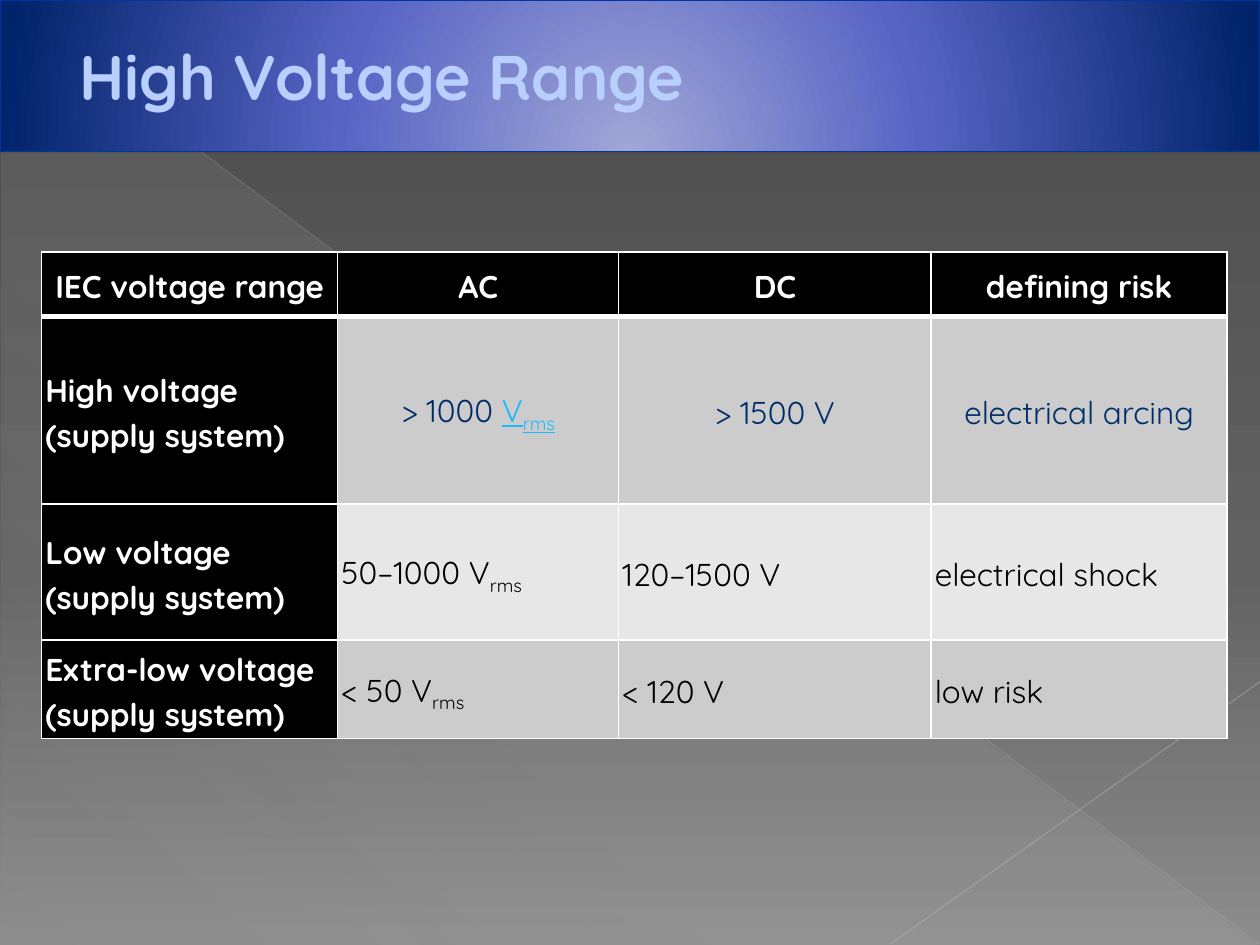
from dataclasses import dataclass

from lxml.etree import SubElement
from pptx import Presentation
from pptx.dml.color import RGBColor
from pptx.enum.shapes import MSO_CONNECTOR, MSO_SHAPE
from pptx.enum.text import MSO_ANCHOR, PP_ALIGN
from pptx.oxml.ns import qn
from pptx.util import Inches, Pt


@dataclass(frozen=True)
class Theme:
    font: str = "Quicksand"
    title_size: float = 36
    table_size: float = 18
    title: str = "B9D0FF"
    title_line: str = "00349E"
    white: str = "FFFFFF"
    black: str = "000000"
    accent: str = "002D6A"
    link: str = "17BBFD"
    bands: tuple = ("CCCCCC", "E7E7E7")
    backdrop: tuple = ((0, "4A4A4A"), (60, "626262"), (100, "8C8C8C"))
    banner: tuple = ((0, "A1A6D6"), (46, "5864C4"), (100, "00236A"))
    sheen: tuple = ((0, "D2D2D2", 10), (70, "D2D2D2", 8), (100, "D2D2D2", 1))


THEME = Theme()
COLUMNS = (2.35, 2.23, 2.48, 2.35)
ROWS = (0.51, 1.49, 1.08, 0.64)
# A "|" splits a value from its subscript.
CELLS = (
    ("IEC voltage range", "AC", "DC", "defining risk"),
    ("High voltage (supply system)", "> 1000 |V|rms", "> 1500 V", "electrical arcing"),
    ("Low voltage (supply system)", "50–1000 V|rms", "120–1500 V", "electrical shock"),
    ("Extra-low voltage (supply system)", "< 50 V|rms", "< 120 V", "low risk"),
)


def add_color(parent, color, alpha=100):
    node = SubElement(parent, qn("a:srgbClr"), val=color)
    if alpha < 100:
        SubElement(node, qn("a:alpha"), val=str(alpha * 1000))


def set_gradient(fill, holder, stops, angle=None, center=None):
    """Fill holder with stops, along an angle or around a center rectangle."""
    fill.solid()
    solid = holder.find(qn("a:solidFill"))
    gradient = holder.makeelement(qn("a:gradFill"), {"rotWithShape": "1"})
    stop_list = SubElement(gradient, qn("a:gsLst"))
    for position, *color in stops:
        add_color(SubElement(stop_list, qn("a:gs"), pos=str(position * 1000)), *color)
    if center:
        circle = SubElement(gradient, qn("a:path"), {"path": "circle"})
        sides = {side: str(value * 1000) for side, value in zip("ltrb", center)}
        SubElement(circle, qn("a:fillToRect"), sides)
    else:
        SubElement(gradient, qn("a:lin"), ang=str(angle * 60000), scaled="0")
    holder.replace(solid, gradient)


def style_span(span, size, color, bold=False):
    span.font.name = THEME.font
    span.font.size = Pt(size)
    span.font.bold = bold
    span.font.color.rgb = RGBColor.from_string(color)


def add_sheen(slide):
    triangle = slide.shapes.add_shape(
        MSO_SHAPE.RIGHT_TRIANGLE, Inches(0.01), Inches(0.02), Inches(9.98), Inches(7.48))
    triangle.shadow.inherit = False
    triangle.line.fill.background()
    set_gradient(triangle.fill, triangle.element.spPr, THEME.sheen, angle=133)


def add_hairline(slide, start, end, color, width, alpha):
    line = slide.shapes.add_connector(
        MSO_CONNECTOR.STRAIGHT, *map(Inches, start), *map(Inches, end))
    line.line.width = Pt(width)
    line.line.color.rgb = RGBColor.from_string(color)
    shade = line.element.spPr.find(".//" + qn("a:srgbClr"))
    SubElement(shade, qn("a:alpha"), val=str(alpha * 1000))
    SubElement(line.element.spPr, qn("a:effectLst"))


def add_title(slide, text):
    title = slide.shapes.title
    title.element.getparent().append(title.element)  # in front of the backdrop
    title.left, title.top, title.width, title.height = map(Inches, (0, 0, 10, 1.2))
    properties = title.element.spPr
    set_gradient(title.fill, properties, THEME.banner, center=(50, 155, 50, -55))
    title.line.color.rgb = RGBColor.from_string(THEME.title_line)
    title.line.width = Pt(0.75)
    effects = SubElement(properties, qn("a:effectLst"))
    shadow = SubElement(effects, qn("a:outerShdw"), blurRad=str(Pt(4)), dist=str(Pt(3)),
                        dir=str(245 * 60000), rotWithShape="0")
    add_color(shadow, THEME.black, 60)

    frame = title.text_frame
    frame.text = text
    frame.vertical_anchor = MSO_ANCHOR.MIDDLE
    para = frame.paragraphs[0]
    para.alignment = PP_ALIGN.LEFT
    para._p.get_or_add_pPr().set("marL", str(Inches(0.53)))
    style_span(para.runs[0], THEME.title_size, THEME.title, bold=True)


def set_borders(cell, top, bottom):
    properties = cell._tc.get_or_add_tcPr()
    for side, width in (("L", 1), ("R", 1), ("T", top), ("B", bottom)):
        border = SubElement(properties, qn("a:ln" + side), w=str(Pt(width)))
        add_color(SubElement(border, qn("a:solidFill")), THEME.white)


def fill_cell(cell, text, row, column):
    heading = row == 0 or column == 0
    set_borders(cell, top=3 if row == 1 else 1, bottom=3 if row == 0 else 1)
    cell.fill.solid()
    band = THEME.black if heading else THEME.bands[(row - 1) % 2]
    cell.fill.fore_color.rgb = RGBColor.from_string(band)
    cell.vertical_anchor = MSO_ANCHOR.MIDDLE
    cell.margin_left = cell.margin_right = Inches(0.03)
    cell.margin_top = cell.margin_bottom = Inches(0.03)

    para = cell.text_frame.paragraphs[0]
    para.line_spacing = 1.15
    centered = row == 0 or (row == 1 and column > 0)
    para.alignment = PP_ALIGN.CENTER if centered else PP_ALIGN.LEFT
    color = THEME.white if heading else THEME.accent if row == 1 else THEME.black
    parts = text.split("|")
    for index, part in enumerate(parts):
        span = para.add_run()
        span.text = part
        linked = len(parts) == 3 and index > 0
        style_span(span, THEME.table_size, THEME.link if linked else color, heading)
        if linked:
            span.font.underline = True
        if part == "rms":
            span.font._element.set("baseline", "-25000")


def add_voltage_table(slide):
    frame = slide.shapes.add_table(
        len(ROWS), len(COLUMNS), Inches(0.33), Inches(2),
        Inches(sum(COLUMNS)), Inches(sum(ROWS)))
    table = frame.table
    for column, width in zip(table.columns, COLUMNS):
        column.width = Inches(width)
    for row, height in zip(table.rows, ROWS):
        row.height = Inches(height)
    for row, texts in enumerate(CELLS):
        for column, text in enumerate(texts):
            fill_cell(table.cell(row, column), text, row, column)


def main():
    deck = Presentation()
    deck.slide_width, deck.slide_height = Inches(10), Inches(7.5)
    slide = deck.slides.add_slide(deck.slide_layouts[5])
    backdrop = slide.background.fill
    backdrop.solid()
    set_gradient(backdrop, slide.element.find(".//" + qn("p:bgPr")),
                 THEME.backdrop, angle=90)
    add_sheen(slide)
    add_hairline(slide, (0, 0.01), (9.99, 7.49), "BFBFBF", 0.39, 35)
    add_hairline(slide, (10, 5.41), (7.07, 7.49), "C6C6C6", 0.47, 45)
    add_title(slide, "High Voltage Range")
    add_voltage_table(slide)
    deck.save("out.pptx")


if __name__ == "__main__":
    main()
